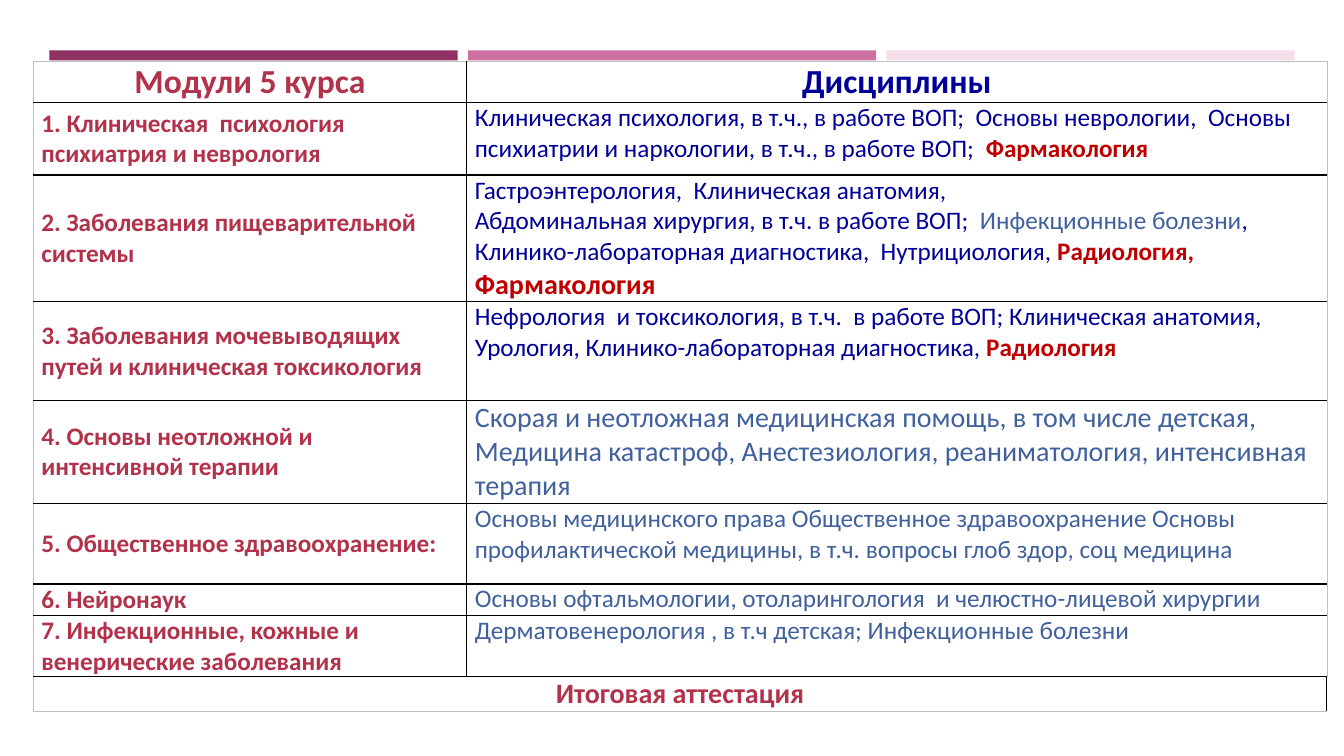
import pptx
import pptx.util
import pptx.dml.color
import pptx.enum.shapes
import pptx.enum.text
import pptx.oxml
import pptx.oxml.ns
from pptx.util import Inches

COLORS = {
    "plum": "903163", "pink": "CE71A2", "blush": "F6DEEB",
    "module": "B2324B", "navy": "000099", "blue": "40619D", "red": "C00000",
    "grid": "000000", "frame": "BFBFBF",
}
FONT = "Calibri"

# Each run: text, colour, size, bold
HEADER = [("Модули 5 курса", "module", 24, True), ("Дисциплины", "navy", 24, True)]
FOOTER = ("Итоговая аттестация", "module", 20, True)

# Each module: row height, name, paragraphs of discipline runs
MODULES = [
    (0.72, "1. Клиническая  психология психиатрия и неврология", [[
        ("Клиническая психология, в т.ч., в работе ВОП;  Основы неврологии,  Основы  "
         "психиатрии и наркологии, в т.ч., в работе ВОП;  ", "navy", 18, False),
        ("Фармакология", "red", 18, True)]]),
    (1.23, "2. Заболевания пищеварительной системы", [
        [("Гастроэнтерология,  Клиническая анатомия,", "navy", 18, False)],
        [("Абдоминальная хирургия, в т.ч. в работе ВОП;  ", "navy", 18, False),
         ("Инфекционные болезни", "blue", 18, False),
         (", Клинико-лабораторная диагностика,  Нутрициология, ", "navy", 18, False),
         ("Радиология, ", "red", 18, True),
         ("Фармакология", "red", 20, True)]]),
    (0.98, "3. Заболевания мочевыводящих путей и клиническая токсикология", [[
        ("Нефрология  и токсикология, в т.ч.  в работе ВОП; Клиническая анатомия, "
         "Урология, Клинико-лабораторная диагностика, ", "navy", 18, False),
        ("Радиология", "red", 18, True)]]),
    (1.0, "4. Основы неотложной и интенсивной терапии", [[
        ("Скорая и неотложная медицинская помощь, в том числе детская, Медицина катастроф, "
         "Анестезиология, реаниматология, интенсивная терапия", "blue", 20, False)]]),
    (0.8, "5. Общественное здравоохранение:", [[
        ("Основы медицинского права Общественное здравоохранение Основы профилактической "
         "медицины, в т.ч. вопросы глоб здор, соц медицина", "blue", 18, False)]]),
    (0.31, "6. Нейронаук", [[
        ("Основы офтальмологии, отоларингология  и челюстно-лицевой хирургии",
         "blue", 18, False)]]),
    (0.6, "7. Инфекционные, кожные и венерические заболевания", [[
        ("Дерматовенерология , в т.ч детская; Инфекционные болезни", "blue", 18, False)]]),
]
HEADER_H, FOOTER_H = 0.4, 0.33
COL_WIDTHS = [4.3, 8.53]
TABLE_LEFT, TABLE_TOP = 0.33, 0.61
BARS = ["plum", "pink", "blush"]
BAR_LEFT, BAR_TOP, BAR_W, BAR_H, BAR_STEP = 0.49, 0.5, 4.05, 0.1, 4.15


def rgb(name):
    return pptx.dml.color.RGBColor.from_string(COLORS[name])


def set_borders(cell, row, col, last_row, last_col):
    """Black inner lines, thin grey lines round the table."""
    outer = {"lnL": col == 0, "lnR": col == last_col,
             "lnT": row == 0, "lnB": row == last_row}
    tcPr = cell._tc.get_or_add_tcPr()
    for i, (tag, is_outer) in enumerate(outer.items()):
        width, color = (0.5, "frame") if is_outer else (1, "grid")
        tcPr.insert(i, pptx.oxml.parse_xml(
            f'<a:{tag} {pptx.oxml.ns.nsdecls("a")} w="{pptx.util.Pt(width)}">'
            f'<a:solidFill><a:srgbClr val="{COLORS[color]}"/></a:solidFill></a:{tag}>'))


def fill_cell(cell, paragraphs, centred=False, middle=True):
    cell.margin_left = cell.margin_right = Inches(0.08)
    cell.margin_top = cell.margin_bottom = 0
    anchor = pptx.enum.text.MSO_ANCHOR
    cell.vertical_anchor = anchor.MIDDLE if middle else anchor.TOP
    tf = cell.text_frame
    align = pptx.enum.text.PP_ALIGN
    for i, runs in enumerate(paragraphs):
        p = tf.paragraphs[0] if i == 0 else tf.add_paragraph()
        p.alignment = align.CENTER if centred else align.LEFT
        for text, color, size, bold in runs:
            r = p.add_run()
            r.text = text
            r.font.name = FONT
            r.font.size = pptx.util.Pt(size)
            r.font.bold = bold
            r.font.color.rgb = rgb(color)


def main():
    prs = pptx.Presentation()
    prs.slide_width, prs.slide_height = Inches(13.33), Inches(7.5)
    s = prs.slides.add_slide(prs.slide_layouts[6])

    # Coloured bars along the top
    for i, color in enumerate(BARS):
        sp = s.shapes.add_shape(
            pptx.enum.shapes.MSO_SHAPE.RECTANGLE, Inches(BAR_LEFT + i * BAR_STEP),
            Inches(BAR_TOP), Inches(BAR_W), Inches(BAR_H))
        sp.shadow.inherit = False
        sp.fill.solid()
        sp.fill.fore_color.rgb = rgb(color)
        sp.line.fill.background()

    # Table grid
    heights = [HEADER_H] + [m[0] for m in MODULES] + [FOOTER_H]
    last_row, last_col = len(heights) - 1, len(COL_WIDTHS) - 1
    table = s.shapes.add_table(
        len(heights), len(COL_WIDTHS), Inches(TABLE_LEFT), Inches(TABLE_TOP),
        Inches(sum(COL_WIDTHS)), Inches(sum(heights))).table
    table.first_row = table.horz_banding = False
    for column, width in zip(table.columns, COL_WIDTHS):
        column.width = Inches(width)
    for y, height in enumerate(heights):
        table.rows[y].height = Inches(height)
        for x in range(len(COL_WIDTHS)):
            table.cell(y, x).fill.background()
            set_borders(table.cell(y, x), y, x, last_row, last_col)

    # Header, modules and closing row
    for x, run in enumerate(HEADER):
        fill_cell(table.cell(0, x), [[run]], centred=True)
    for y, (_, name, disciplines) in enumerate(MODULES, start=1):
        fill_cell(table.cell(y, 0), [[(name, "module", 18, True)]])
        fill_cell(table.cell(y, 1), disciplines, middle=False)
    table.cell(last_row, 0).merge(table.cell(last_row, last_col))
    fill_cell(table.cell(last_row, 0), [[FOOTER]], centred=True)

    prs.save("out.pptx")


if __name__ == "__main__":
    main()
